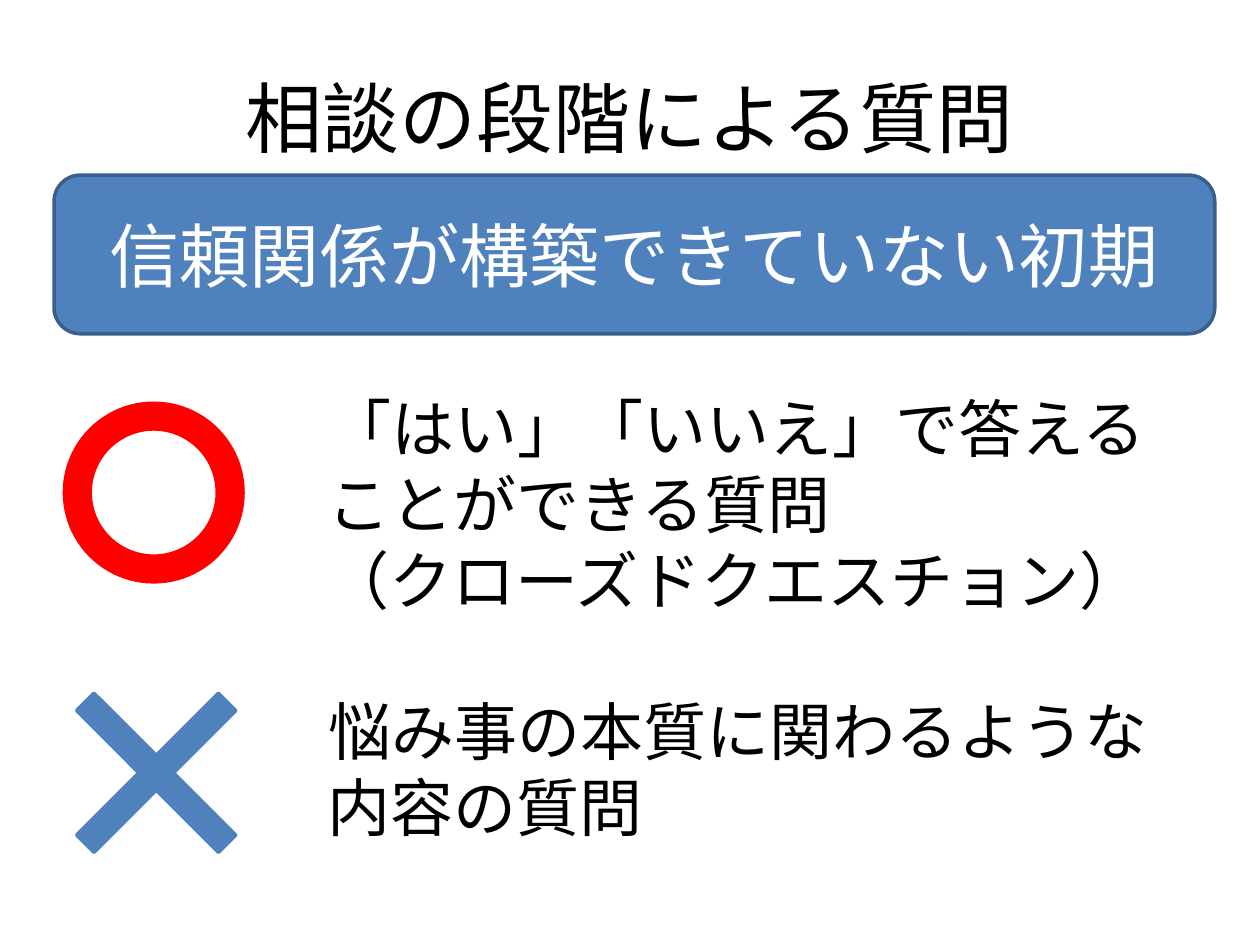
import pptx
import pptx.dml.color
import pptx.enum.shapes
import pptx.enum.text
import pptx.util
from pptx.util import Cm

FONT = "Noto Sans CJK JP"
BLACK, WHITE, RED, BLUE, NAVY = "000000", "FFFFFF", "FF0000", "4F81BD", "3A5F8C"
SHAPE = pptx.enum.shapes.MSO_SHAPE
CENTER = pptx.enum.text.PP_ALIGN.CENTER
MIDDLE = pptx.enum.text.MSO_ANCHOR.MIDDLE
HANG = 1.25
FIRST = {"left": HANG, "first": -HANG, "before": 7.2}
CONTINUED = {"left": HANG, "first": -0.03, "before": 0}


def rgb(value):
    return pptx.dml.color.RGBColor.from_string(value)


def add_run(p, text, size, color):
    r = p.add_run()
    r.text = text
    for name, value in {"size": pptx.util.Pt(size), "name": FONT}.items():
        setattr(r.font, name, value)
    r.font.color.rgb = rgb(color)
    ea = pptx.oxml.parse_xml(
        '<a:ea xmlns:a="http://schemas.openxmlformats.org/drawingml/2006/main"'
        f' typeface="{FONT}"/>')
    r.font._element.append(ea)


def write_centered(sp, text, size, color):
    tf = sp.text_frame
    tf.word_wrap = True
    tf.vertical_anchor = MIDDLE
    p = tf.paragraphs[0]
    p.alignment = CENTER
    add_run(p, text, size, color)


def add_box(s, left, top, width, height):
    return s.shapes.add_textbox(Cm(left), Cm(top), Cm(width), Cm(height))


def add_explanation(s, box, paragraphs):
    """Add hanging paragraphs, given as (text, indent format) pairs."""
    tf = add_box(s, *box).text_frame
    tf.word_wrap = True
    for i, (text, indent) in enumerate(paragraphs):
        p = tf.add_paragraph() if i else tf.paragraphs[0]
        formats = {"space_before": pptx.util.Pt(indent["before"]),
                   "line_spacing": pptx.util.Pt(43.5)}
        for name, value in formats.items():
            setattr(p, name, value)
        pPr = p._p.get_or_add_pPr()
        pPr.set("marL", str(Cm(indent["left"])))
        pPr.set("indent", str(Cm(indent["first"])))
        add_run(p, text, 36, BLACK)


def add_shape(s, kind, box, fill, line, adjustment=None):
    sp = s.shapes.add_shape(kind, *map(Cm, box))
    sp.shadow.inherit = False
    sp.fill.solid()
    sp.fill.fore_color.rgb = rgb(fill)
    sp.line.color.rgb = rgb(line)
    sp.line.width = pptx.util.Pt(2)
    if adjustment is not None:
        sp.adjustments[0] = adjustment
    return sp


def main():
    prs = pptx.Presentation()
    prs.slide_width, prs.slide_height = Cm(25.4), Cm(19.05)
    s = prs.slides.add_slide(prs.slide_layouts[6])

    title = add_box(s, 1.27, 0.76, 22.86, 3.18)
    write_centered(title, "相談の段階による質問", 44, BLACK)

    banner = add_shape(s, SHAPE.ROUNDED_RECTANGLE, (1.09, 3.53, 23.4, 3.2), BLUE, NAVY)
    write_centered(banner, "信頼関係が構築できていない初期", 40, WHITE)

    add_explanation(s, (5.11, 7.72, 18.4, 5.2), [
        ("　「はい」「いいえ」で答えることができる質問", FIRST),
        ("（クローズドクエスチョン）", CONTINUED),
    ])
    add_explanation(s, (5.11, 13.82, 18.6, 3.6), [
        ("　悩み事の本質に関わるような内容の質問", FIRST),
    ])

    add_shape(s, SHAPE.DONUT, (1.3, 8.13, 3.6, 3.6), RED, RED, 0.144)
    add_shape(s, SHAPE.MATH_MULTIPLY, (0.4, 12.83, 5.5, 5.5), BLUE, BLUE, 0.09)

    prs.save("out.pptx")


if __name__ == "__main__":
    main()
